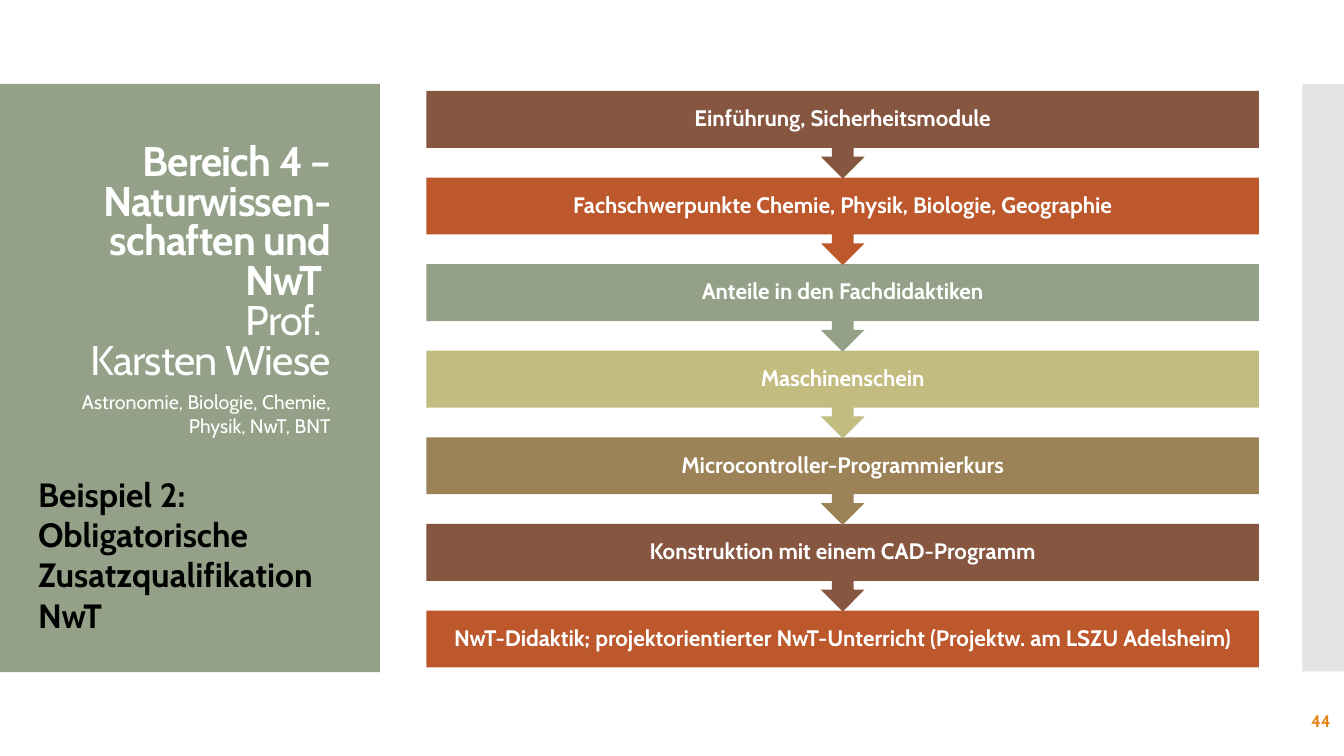
from lxml import etree
from pptx import Presentation
from pptx import util as u
from pptx.dml.color import RGBColor
from pptx.enum import shapes, text
from pptx.oxml.ns import qn

Pt = u.Pt
FONT = "Cabin"
WHITE, SAGE, BROWN, RUST = "FFFFFF", "94A088", "865640", "BD582C"
STEPS = [
    ("Einführung, Sicherheitsmodule", BROWN),
    ("Fachschwerpunkte Chemie, Physik, Biologie, Geographie", RUST),
    ("Anteile in den Fachdidaktiken", SAGE),
    ("Maschinenschein", "C2BC80"),
    ("Microcontroller-Programmierkurs", "9B8357"),
    ("Konstruktion mit einem CAD-Programm", BROWN),
    ("NwT-Didaktik; projektorientierter NwT-Unterricht (Projektw. am LSZU Adelsheim)", RUST),
]


def color(value):
    """Turn a hex string into a colour."""
    return RGBColor.from_string(value)


def add_text(para, words, size=14, fill=WHITE, bold=False, align="LEFT", line=1.0, tracking=0):
    """Append one formatted span, with its paragraph settings."""
    para.alignment = text.PP_ALIGN[align]
    para.line_spacing = line
    span = para.add_run()
    span.text = words
    span.font.name, span.font.size, span.font.bold = FONT, Pt(size), bold
    span.font.color.rgb = color(fill)
    if tracking:
        span._r.get_or_add_rPr().set("spc", str(tracking))


def set_frame(box, anchor="TOP", inset=None):
    """Make a text frame wrap and return it."""
    frame = box.text_frame
    frame.word_wrap = True
    frame.auto_size = text.MSO_AUTO_SIZE.NONE
    frame.vertical_anchor = text.MSO_ANCHOR[anchor]
    if inset is not None:
        frame.margin_left = frame.margin_right = Pt(inset)
        frame.margin_top = frame.margin_bottom = Pt(inset)
    return frame


def add_block(page, kind, left, top, width, height, fill, alpha=None):
    """Add a flat filled shape without line or shadow."""
    box = page.shapes.add_shape(
        shapes.MSO_SHAPE[kind], Pt(left), Pt(top), Pt(width), Pt(height))
    box.shadow.inherit = False
    box.line.fill.background()
    box.fill.solid()
    box.fill.fore_color.rgb = color(fill)
    if alpha:
        tint = box._element.spPr.find(".//" + qn("a:srgbClr"))
        etree.SubElement(tint, qn("a:alpha")).set("val", str(alpha * 1000))
    return box


def add_lines(page, left, top, width, height, lines, anchor="TOP", **style):
    """Add a text box with one paragraph per line."""
    box = page.shapes.add_textbox(Pt(left), Pt(top), Pt(width), Pt(height))
    frame = set_frame(box, anchor)
    for index, words in enumerate(lines):
        para = frame.add_paragraph() if index else frame.paragraphs[0]
        add_text(para, words, **style)


def add_side_panel(page, left, top, width, height):
    """Place the panel with title, subjects and example."""
    panel = add_block(page, "RECTANGLE", left, top, width, height, SAGE)
    title = page.shapes.title
    panel._element.addnext(title._element)
    inner, column = left + 20.2, 223.2
    title.left, title.top = Pt(inner), Pt(top + 30)
    title.width, title.height = Pt(column), Pt(187.2)
    frame = set_frame(title, "BOTTOM")
    style = dict(size=29.6, align="RIGHT", line=0.8, tracking=-60)
    para = frame.paragraphs[0]
    add_text(para, "Bereich 4 – Naturwissen-schaften und NwT ", bold=True, **style)
    para.add_line_break()
    add_text(para, "Prof. ", **style)
    add_text(frame.add_paragraph(), "Karsten Wiese", **style)
    add_lines(page, inner, top + 215, column, 60,
              ["Astronomie, Biologie, Chemie, Physik, NwT, BNT"], align="RIGHT")
    add_lines(page, inner, top + 274.8, column, 123.8,
              ["Beispiel 2:", "Obligatorische", "Zusatzqualifikation NwT"],
              size=24, fill="000000", bold=True)


def add_step_flow(page, left, top, width, height):
    """Stack the steps, each pointing to the next one."""
    bar = 40.7
    pitch = (height - bar) / (len(STEPS) - 1)
    for index, (words, fill) in reversed(list(enumerate(STEPS))):
        last = index == len(STEPS) - 1
        kind = "RECTANGLE" if last else "DOWN_ARROW_CALLOUT"
        box = add_block(page, kind, left, top + index * pitch, width,
                        bar if last else 62.6, fill)
        frame = set_frame(box, "MIDDLE", 8.6)
        add_text(frame.paragraphs[0], words, size=16, bold=True, align="CENTER", line=0.9)


def main():
    """Build and save the slide."""
    deck = Presentation()
    deck.slide_width, deck.slide_height = Pt(960), Pt(540)
    page = deck.slides.add_slide(deck.slide_layouts.get_by_name("Title Only"))
    add_block(page, "RECTANGLE", 930.2, 60, 29.8, 419.6, "C8C8C8", alpha=50)
    add_side_panel(page, 0, 60, 271.4, 420.2)
    add_step_flow(page, 304.6, 65, 594.7, 411.8)
    add_lines(page, 837.4, 500.4, 120.2, 28.8, ["44"], anchor="MIDDLE",
              size=12, fill="E48312", bold=True, align="RIGHT")
    deck.save("out.pptx")


if __name__ == "__main__":
    main()
